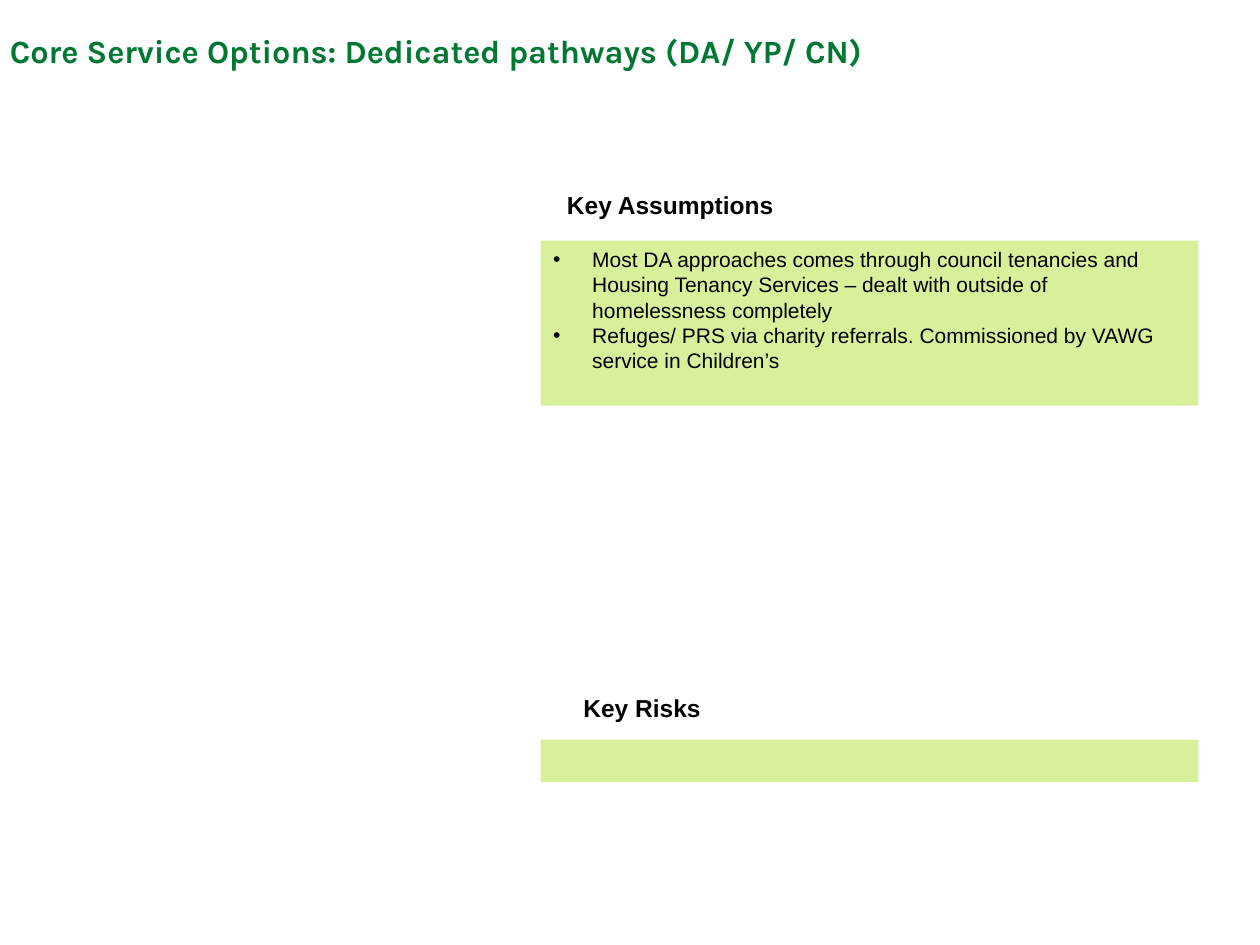
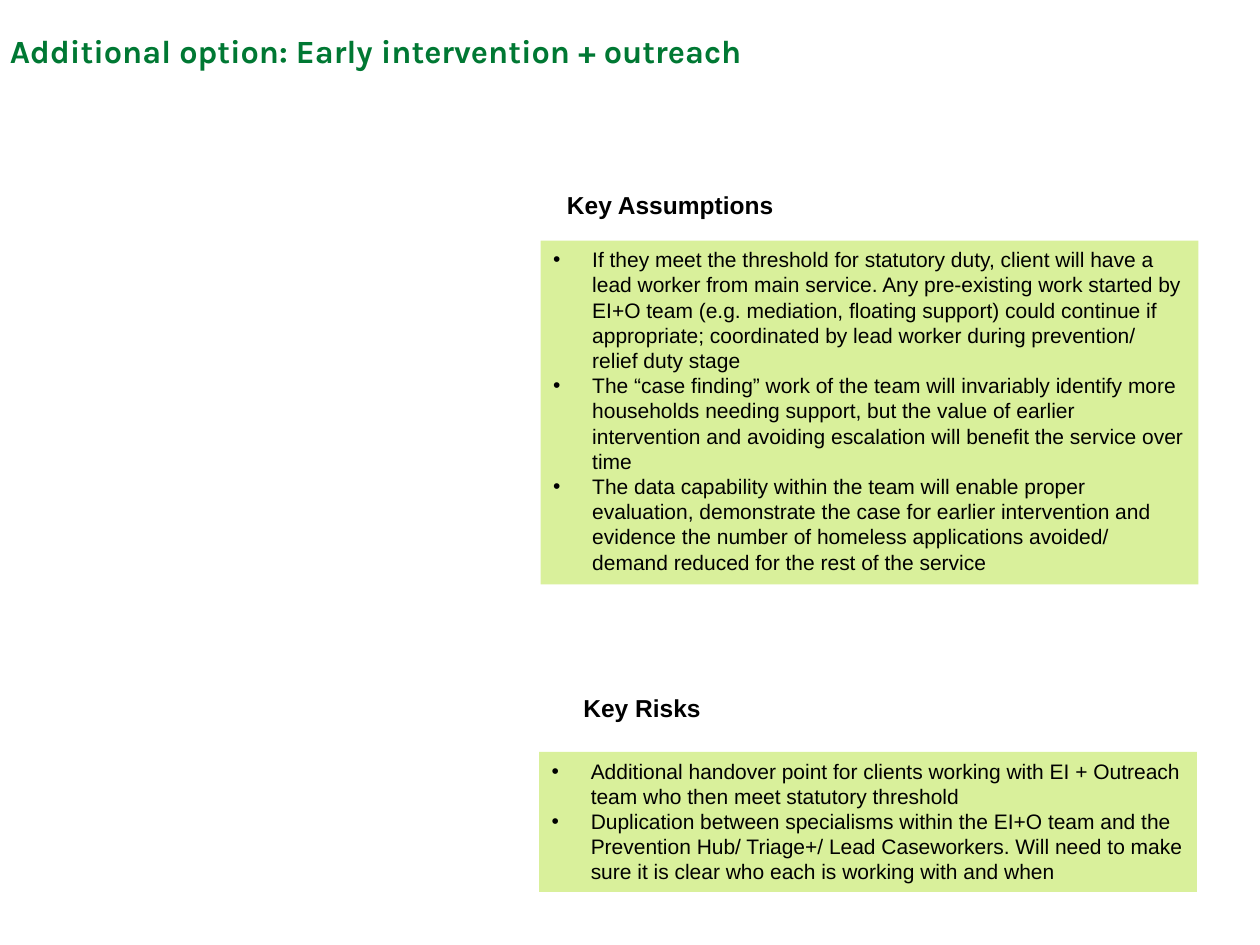
from dataclasses import dataclass

from lxml.etree import SubElement
from pptx import Presentation
from pptx.dml.color import RGBColor
from pptx.enum.shapes import MSO_SHAPE as Preset
from pptx.enum.text import MSO_ANCHOR as Anchor, MSO_AUTO_SIZE as AutoSize, PP_ALIGN as Align
from pptx.oxml.ns import qn
from pptx.slide import Slide
from pptx.text.text import TextFrame
from pptx.util import Cm, Length, Pt

TITLE_ONLY = 5


@dataclass(frozen=True)
class TextStyle:
    font: str
    size: float
    color: RGBColor
    bold: bool = False


@dataclass(frozen=True)
class Theme:
    panel: RGBColor = RGBColor(0xD9, 0xF0, 0x9B)
    title: TextStyle = TextStyle("Karla", 18.5, RGBColor(0x00, 0x78, 0x33), True)
    heading: TextStyle = TextStyle("Arial", 14, RGBColor(0, 0, 0), True)
    body: TextStyle = TextStyle("Arial", 12, RGBColor(0, 0, 0))
    indent: Length = Cm(0.79)


@dataclass(frozen=True)
class Heading:
    text: str
    left: float
    top: float


@dataclass(frozen=True)
class Panel:
    top: float
    height: float
    points: tuple[str, ...] = ()
    left: float = 10.9


@dataclass(frozen=True)
class OptionPage:
    title: str
    assumptions: Panel
    risks: Panel


THEME = Theme()
HEADINGS = (
    Heading("Key Assumptions", 11.18, 3.71),
    Heading("Key Risks", 11.51, 13.84),
)
PAGES = (
    OptionPage(
        "Core Service Options: Dedicated pathways (DA/ YP/ CN)",
        Panel(4.85, 3.33, (
            "Most DA approaches comes through council tenancies and Housing Tenancy "
            "Services – dealt with outside of homelessness completely",
            "Refuges/ PRS via charity referrals. Commissioned by VAWG service in Children’s",
        )),
        Panel(14.91, 0.86),
    ),
    OptionPage(
        "Additional option: Early intervention + outreach",
        Panel(4.85, 6.93, (
            "If they meet the threshold for statutory duty, client will have a lead worker "
            "from main service. Any pre-existing work started by EI+O team (e.g. mediation, "
            "floating support) could continue if appropriate; coordinated by lead worker "
            "during prevention/ relief duty stage",
            "The “case finding” work of the team will invariably identify more households "
            "needing support, but the value of earlier intervention and avoiding escalation "
            "will benefit the service over time",
            "The data capability within the team will enable proper evaluation, demonstrate "
            "the case for earlier intervention and evidence the number of homeless "
            "applications avoided/ demand reduced for the rest of the service",
        )),
        Panel(15.16, 2.82, (
            "Additional handover point for clients working with EI + Outreach team who then "
            "meet statutory threshold",
            "Duplication between specialisms within the EI+O team and the Prevention Hub/ "
            "Triage+/ Lead Caseworkers. Will need to make sure it is clear who each is "
            "working with and when",
        ), left=10.87),
    ),
)


def set_attributes(target: object, values: dict[str, object]) -> None:
    for name, value in values.items():
        setattr(target, name, value)


def write_text(frame: TextFrame, lines: tuple[str, ...], style: TextStyle,
               bullets: bool = False) -> None:
    set_attributes(frame, {
        "word_wrap": True,
        "auto_size": AutoSize.NONE,
        "vertical_anchor": Anchor.TOP,
    })
    for index, line in enumerate(lines):
        para = frame.paragraphs[0] if index == 0 else frame.add_paragraph()
        para.alignment = Align.LEFT
        if bullets:
            properties = para._p.get_or_add_pPr()
            properties.set("marL", str(THEME.indent))
            properties.set("indent", str(-THEME.indent))
            SubElement(properties, qn("a:buFont"), typeface="Arial")
            SubElement(properties, qn("a:buChar"), char="•")
        span = para.add_run()
        span.text = line
        set_attributes(span.font, {
            "name": style.font, "size": Pt(style.size), "bold": style.bold,
        })
        span.font.color.rgb = style.color


def place_title(page: Slide, text: str) -> None:
    box = page.shapes.title
    set_attributes(box, {
        "left": Cm(0.2), "top": Cm(0.69), "width": Cm(19.1), "height": Cm(0.76),
    })
    frame = box.text_frame
    sides = ("left", "top", "right", "bottom")
    set_attributes(frame, {f"margin_{side}": 0 for side in sides})
    write_text(frame, (text,), THEME.title)
    frame.paragraphs[0].line_spacing = 0.95


def add_heading(page: Slide, heading: Heading) -> None:
    box = page.shapes.add_textbox(Cm(heading.left), Cm(heading.top), Cm(8.66), Cm(0.86))
    write_text(box.text_frame, (heading.text,), THEME.heading)


def add_panel(page: Slide, panel: Panel) -> None:
    box = page.shapes.add_shape(
        Preset.RECTANGLE, Cm(panel.left), Cm(panel.top), Cm(13.26), Cm(panel.height))
    box.shadow.inherit = False
    box.fill.solid()
    box.fill.fore_color.rgb = THEME.panel
    box.line.fill.background()
    write_text(box.text_frame, panel.points, THEME.body, bullets=True)


def main() -> None:
    deck = Presentation()
    set_attributes(deck, {"slide_width": Cm(25.4), "slide_height": Cm(19.05)})
    for option in PAGES:
        page = deck.slides.add_slide(deck.slide_layouts[TITLE_ONLY])
        place_title(page, option.title)
        for heading in HEADINGS:
            add_heading(page, heading)
        for panel in (option.assumptions, option.risks):
            add_panel(page, panel)
    deck.save("out.pptx")


if __name__ == "__main__":
    main()
